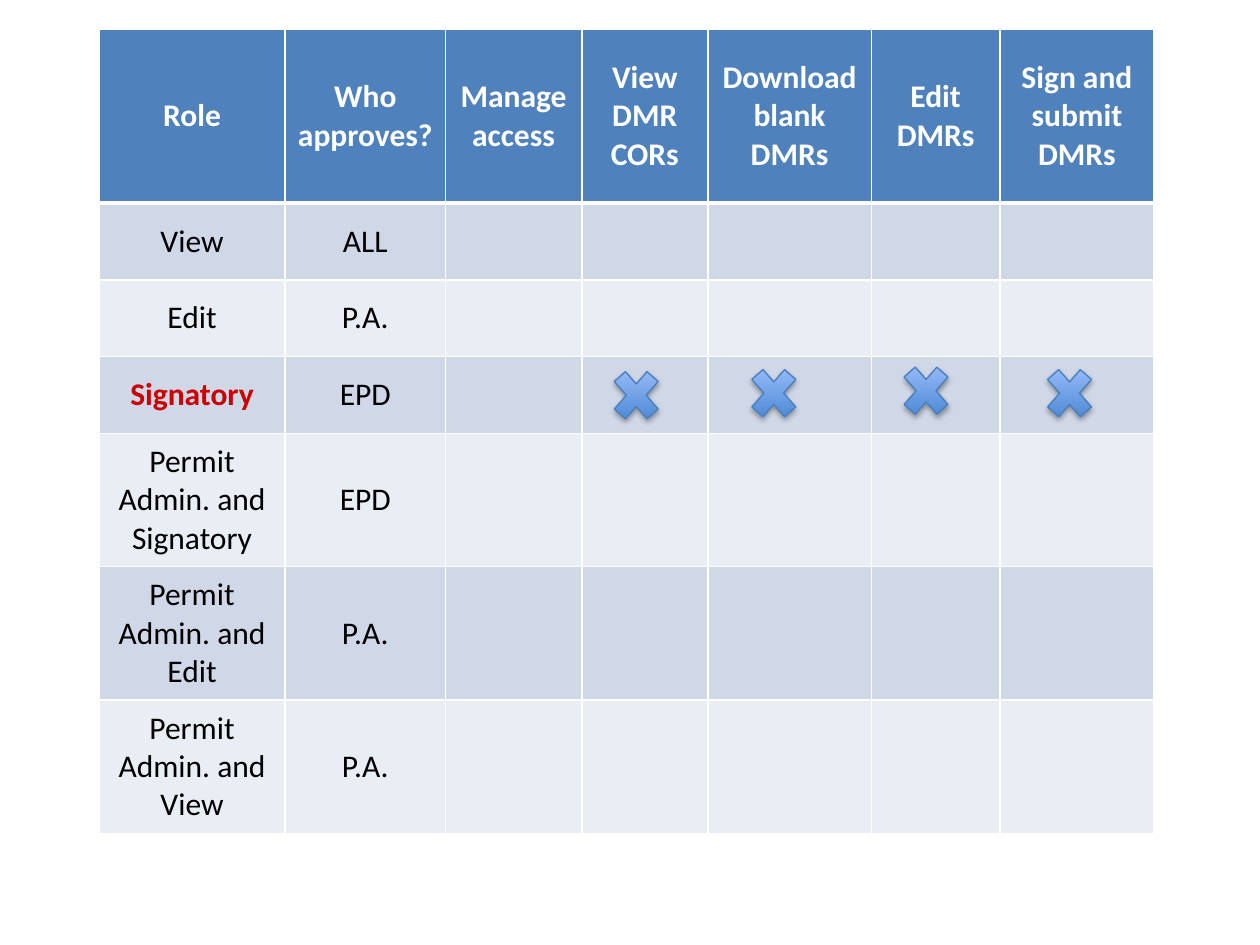
"""Build the slide showing which permissions the signatory role has."""
from lxml.etree import SubElement
from pptx import Presentation
from pptx.dml.color import RGBColor
from pptx.enum.shapes import MSO_SHAPE
from pptx.enum.text import MSO_ANCHOR, PP_ALIGN
from pptx.oxml import parse_xml
from pptx.oxml.ns import nsdecls, qn
from pptx.util import Pt

WHITE = RGBColor(0xFF, 0xFF, 0xFF)
BLACK = RGBColor(0x00, 0x00, 0x00)
RED = RGBColor(0xCC, 0x00, 0x00)
HEADER_BLUE = RGBColor(0x4F, 0x81, 0xBD)
BAND_DARK = RGBColor(0xD0, 0xD8, 0xE8)
BAND_LIGHT = RGBColor(0xE9, 0xED, 0xF4)
MARK_DARK = RGBColor(0x3F, 0x80, 0xCE)
MARK_LIGHT = RGBColor(0xA4, 0xC4, 0xFF)
MARK_LINE = RGBColor(0x4B, 0x7E, 0xBC)

HEADERS = ["Role", "Who approves?", "Manage access", "View DMR CORs",
           "Download blank DMRs", "Edit DMRs", "Sign and submit DMRs"]
ROLES = [
    ("View", "ALL"),
    ("Edit", "P.A."),
    ("Signatory", "EPD"),
    ("Permit Admin. and Signatory", "EPD"),
    ("Permit Admin. and Edit", "P.A."),
    ("Permit Admin. and View", "P.A."),
]
COLUMN_WIDTHS = [106.5, 91.5, 78, 72, 93.5, 73.5, 88]
ROW_HEIGHTS = [99.2] + [43.9] * 3 + [76.2] * 3
MARK_POSITIONS = [(345.6, 205.4), (424.2, 204.2), (511.2, 202.8), (593.2, 204.2)]


def add_border(cell, side, width):
    line = SubElement(cell._tc.get_or_add_tcPr(), qn(f"a:{side}"), w=str(Pt(width)))
    fill = SubElement(line, qn("a:solidFill"))
    SubElement(fill, qn("a:srgbClr"), val=str(WHITE))


presentation = Presentation()
presentation.slide_width = Pt(720)
presentation.slide_height = Pt(540)
slide = presentation.slides.add_slide(presentation.slide_layouts[6])

table = slide.shapes.add_table(
    len(ROW_HEIGHTS), len(COLUMN_WIDTHS), Pt(56.5), Pt(16.8),
    Pt(sum(COLUMN_WIDTHS)), Pt(sum(ROW_HEIGHTS))).table
for column, width in zip(table.columns, COLUMN_WIDTHS):
    column.width = Pt(width)
for row, height in zip(table.rows, ROW_HEIGHTS):
    row.height = Pt(height)

for row_index, row in enumerate(table.rows):
    is_header = row_index == 0
    texts = HEADERS if is_header else ROLES[row_index - 1]
    band = BAND_DARK if row_index % 2 else BAND_LIGHT
    for column_index, cell in enumerate(row.cells):
        cell.vertical_anchor = MSO_ANCHOR.MIDDLE
        for side in ("lnL", "lnR", "lnT", "lnB"):
            header_edge = (row_index, side) in ((0, "lnB"), (1, "lnT"))
            add_border(cell, side, 3 if header_edge else 1)
        cell.fill.solid()
        cell.fill.fore_color.rgb = HEADER_BLUE if is_header else band
        if column_index >= len(texts):
            continue
        text = texts[column_index]
        is_signatory = text == "Signatory"
        paragraph = cell.text_frame.paragraphs[0]
        paragraph.alignment = PP_ALIGN.CENTER
        run = paragraph.add_run()
        run.text = text
        run.font.name = "Calibri"
        run.font.size = Pt(18)
        run.font.bold = is_header or is_signatory
        run.font.color.rgb = WHITE if is_header else RED if is_signatory else BLACK

for left, top in MARK_POSITIONS:
    mark = slide.shapes.add_shape(
        MSO_SHAPE.MATH_MULTIPLY, Pt(left), Pt(top), Pt(36), Pt(41))
    mark.fill.gradient()
    mark.fill.gradient_angle = 90
    for stop, position, color in zip(mark.fill.gradient_stops, (0, 1), (MARK_DARK, MARK_LIGHT)):
        stop.position = position
        stop.color.rgb = color
    mark.line.color.rgb = MARK_LINE
    mark.line.width = Pt(0.75)
    mark.shadow.inherit = False
    mark.element.spPr.find(qn("a:effectLst")).append(parse_xml(
        f'<a:outerShdw {nsdecls("a")} blurRad="{Pt(3.1)}" dist="{Pt(1.8)}" '
        'dir="5400000" rotWithShape="0"><a:srgbClr val="000000">'
        '<a:alpha val="35000"/></a:srgbClr></a:outerShdw>'))

presentation.save("out.pptx")
